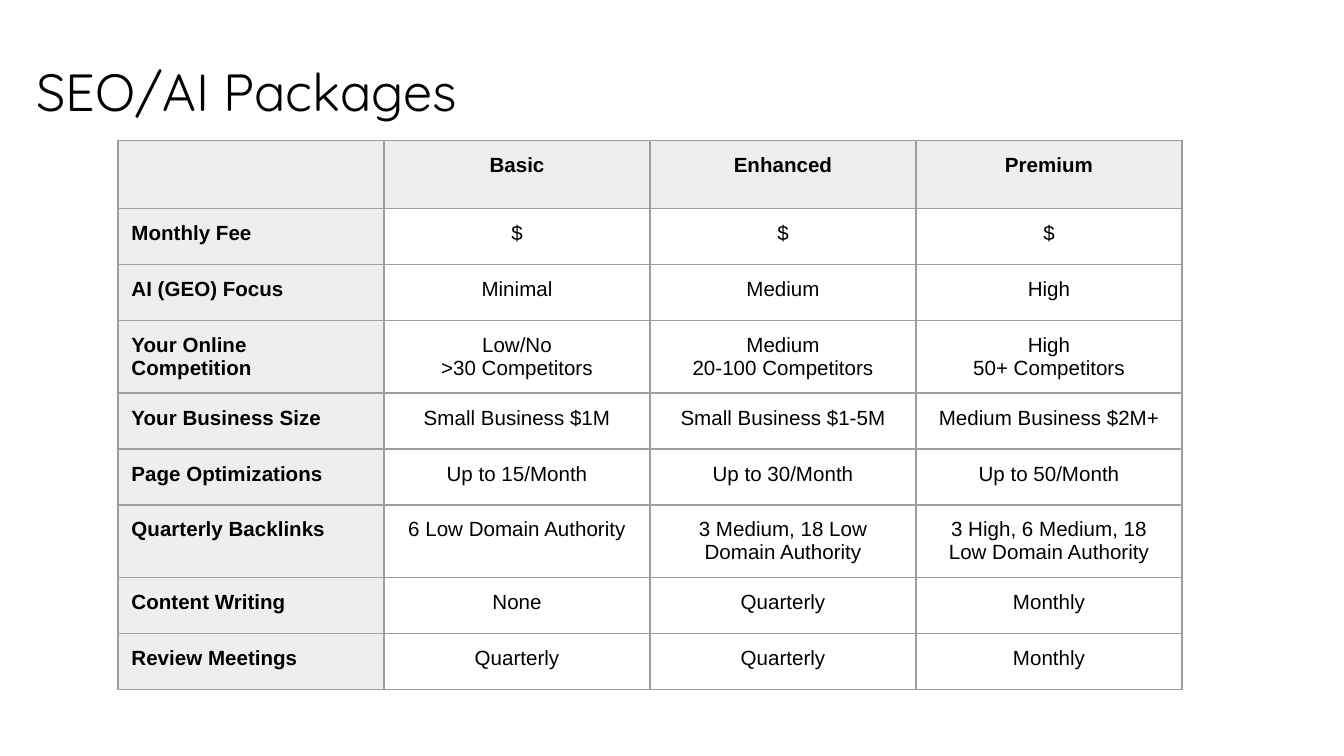
from lxml.etree import SubElement
from pptx import Presentation
from pptx.dml.color import RGBColor
from pptx.enum.text import MSO_ANCHOR, MSO_AUTO_SIZE, PP_ALIGN
from pptx.oxml.ns import qn
from pptx.util import Pt

PACKAGES = [
    ["", "Basic", "Enhanced", "Premium"],
    ["Monthly Fee", "$", "$", "$"],
    ["AI (GEO) Focus", "Minimal", "Medium", "High"],
    ["Your Online Competition", "Low/No\n>30 Competitors",
     "Medium\n20-100 Competitors", "High\n50+ Competitors"],
    ["Your Business Size", "Small Business $1M", "Small Business $1-5M",
     "Medium Business $2M+"],
    ["Page Optimizations", "Up to 15/Month", "Up to 30/Month", "Up to 50/Month"],
    ["Quarterly Backlinks", "6 Low Domain Authority",
     "3 Medium, 18 Low Domain Authority",
     "3 High, 6 Medium, 18 Low Domain Authority"],
    ["Content Writing", "None", "Quarterly", "Monthly"],
    ["Review Meetings", "Quarterly", "Quarterly", "Monthly"],
]
COLUMN_WIDTH, ROW_HEIGHT = 142.5, 30
INSET = Pt(7.2)
MARGINS = {f"margin_{side}": INSET for side in ("left", "top", "right", "bottom")}


def color(value):
    return RGBColor.from_string(value)


def set_attributes(target, values):
    for name, value in values.items():
        setattr(target, name, value)


def format_text(frame, align, **font):
    for para in frame.paragraphs:
        para.alignment = align
        for span in para.runs:
            set_attributes(span.font, font)
            span.font.color.rgb = color("000000")


def add_title(page, text):
    box = page.shapes.title
    set_attributes(box, {"left": Pt(12.25), "top": Pt(24.5),
                         "width": Pt(680), "height": Pt(45)})
    frame = box.text_frame
    frame.text = text
    set_attributes(frame, {**MARGINS, "word_wrap": True,
                           "auto_size": MSO_AUTO_SIZE.NONE,
                           "vertical_anchor": MSO_ANCHOR.TOP})
    format_text(frame, PP_ALIGN.LEFT, name="Quicksand", size=Pt(28))


def add_borders(cell, line_color, width):
    properties = cell._tc.get_or_add_tcPr()
    for side in ("lnL", "lnR", "lnT", "lnB"):
        line = SubElement(properties, qn(f"a:{side}"), w=str(Pt(width)))
        fill = SubElement(line, qn("a:solidFill"))
        SubElement(fill, qn("a:srgbClr"), val=line_color)


def format_cell(cell, text, is_label, is_heading):
    cell.text = text
    set_attributes(cell, {**MARGINS, "vertical_anchor": MSO_ANCHOR.TOP})
    format_text(cell.text_frame, PP_ALIGN.LEFT if is_label else PP_ALIGN.CENTER,
                name="Arial", size=Pt(11), bold=is_label or is_heading)
    add_borders(cell, "9E9E9E", 0.75)
    if is_label or is_heading:
        cell.fill.solid()
        cell.fill.fore_color.rgb = color("EEEEEE")
    else:
        cell.fill.background()


def add_package_table(page, rows):
    row_count, column_count = len(rows), len(rows[0])
    table = page.shapes.add_table(
        row_count, column_count, Pt(63.25), Pt(75.25),
        Pt(COLUMN_WIDTH * column_count), Pt(ROW_HEIGHT * row_count)).table
    set_attributes(table, {"first_row": False, "horz_banding": False})
    for column in table.columns:
        column.width = Pt(COLUMN_WIDTH)
    for row_index, texts in enumerate(rows):
        table.rows[row_index].height = Pt(ROW_HEIGHT)
        for column_index, text in enumerate(texts):
            format_cell(table.cell(row_index, column_index), text,
                        column_index == 0, row_index == 0)


def main():
    deck = Presentation()
    set_attributes(deck, {"slide_width": Pt(720), "slide_height": Pt(405)})
    page = deck.slides.add_slide(deck.slide_layouts[5])

    # Heading
    add_title(page, "SEO/AI Packages")

    # Package comparison
    add_package_table(page, PACKAGES)

    deck.save("out.pptx")


if __name__ == "__main__":
    main()
